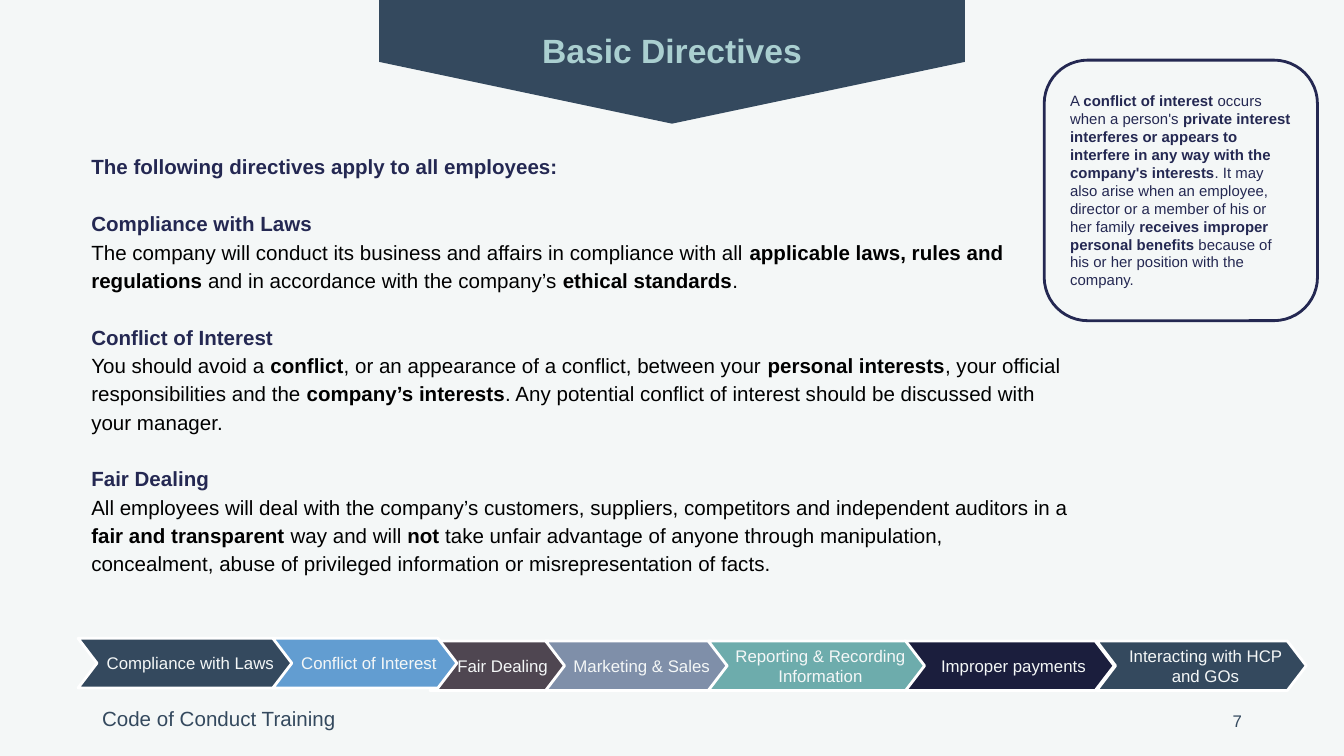
from pptx import Presentation
from pptx.dml.color import RGBColor
from pptx.enum.shapes import MSO_SHAPE as Preset
from pptx.enum.text import MSO_ANCHOR as Anchor, MSO_AUTO_SIZE as AutoSize, PP_ALIGN as Align
from pptx.util import Pt

COLORS = {
    "background": "F4F7F7", "slate": "34495E", "mint": "AACFD0",
    "indigo": "242852", "black": "000000", "white": "FFFFFF",
    "blue": "629DD1", "brown": "4F4651", "gray_blue": "7F8FA9",
    "teal": "6DACAC", "midnight": "1B1E3D",
}
SMALL_INSETS = (5, 3, 5, 3)
WIDE_INSETS = (7.2, 7.2, 7.2, 7.2)

INTRO = "The following directives apply to all employees:"
DIRECTIVES = [
    ("Compliance with Laws",
     "The company will conduct its business and affairs in compliance with all "
     "**applicable laws, rules and regulations** and in accordance with the "
     "company’s **ethical standards**."),
    ("Conflict of Interest",
     "You should avoid a **conflict**, or an appearance of a conflict, between your "
     "**personal interests**, your official responsibilities and the **company’s "
     "interests**. Any potential conflict of interest should be discussed with "
     "your manager."),
    ("Fair Dealing",
     "All employees will deal with the company’s customers, suppliers, competitors "
     "and independent auditors in a **fair and transparent **way and will **not **"
     "take unfair advantage of anyone through manipulation, concealment, abuse of "
     "privileged information or misrepresentation of facts."),
]
DEFINITION = (
    "A **conflict of interest** occurs when a person's **private interest interferes "
    "or appears to interfere in any way with the company's interests**. It may also "
    "arise when an employee, director or a member of his or her family **receives "
    "improper personal benefits** because of his or her position with the company."
)
TOPICS = [
    ("Fair Dealing", 230.4, 343.4, 73.4, "brown"),
    ("Improper payments", 484.6, 343.4, 112.3, "midnight"),
    ("Marketing & Sales", 292.3, 343.4, 98.6, "gray_blue"),
    ("Reporting & Recording Information", 379.4, 343.4, 115.9, "teal"),
    ("Compliance with Laws", 41.8, 342, 115.9, "slate"),
    ("Conflict of Interest", 146.2, 342, 98.6, "blue"),
    ("Interacting with HCP and GOs", 587.5, 343.4, 112.3, "slate"),
]


def rgb(name):
    """Return the named colour."""
    return RGBColor.from_string(COLORS[name])


def prepare_frame(holder, insets, anchor=Anchor.TOP):
    """Set wrapping, insets and anchor, and return the text frame."""
    frame = holder.text_frame
    frame.word_wrap = True
    frame.auto_size = AutoSize.NONE
    frame.vertical_anchor = anchor
    left, top, right, bottom = map(Pt, insets)
    frame.margin_left, frame.margin_top = left, top
    frame.margin_right, frame.margin_bottom = right, bottom
    return frame


def write(frame, text, *, size, color, bold=False, align=Align.LEFT, spacing=1.0, before=0):
    """Add a paragraph in which ** toggles bold."""
    paragraph = frame.add_paragraph() if frame.text else frame.paragraphs[0]
    paragraph.alignment = align
    paragraph.line_spacing = spacing
    paragraph.space_before = Pt(before)
    for index, part in enumerate(text.split("**")):
        run = paragraph.add_run()
        run.text = part
        run.font.name = "Arial"
        run.font.size = Pt(size)
        run.font.bold = bold or index % 2 == 1
        run.font.color.rgb = rgb(color)


def add_textbox(slide, box, insets=SMALL_INSETS, anchor=Anchor.TOP):
    """Add a text box and return its frame."""
    return prepare_frame(slide.shapes.add_textbox(*map(Pt, box)), insets, anchor)


def add_outline(shapes, preset, box, adjustment, fill=None, line=None):
    """Add a preset shape with optional fill and outline."""
    outline = shapes.add_shape(preset, *map(Pt, box))
    outline.adjustments[0] = adjustment
    outline.shadow.inherit = False
    if fill:
        outline.fill.solid()
        outline.fill.fore_color.rgb = rgb(fill)
    else:
        outline.fill.background()
    if line:
        outline.line.color.rgb = rgb(line)
        outline.line.width = Pt(1.5)
    else:
        outline.line.fill.background()
    return outline


def add_heading(slide):
    """Place the title over its downward-pointing banner."""
    banner = add_outline(slide.shapes, Preset.PENTAGON, (326.9, -123.8, 66.2, 313.9), 0.5, "slate")
    banner.rotation = 90
    title = slide.shapes.title
    title.element.addprevious(banner.element)
    title.left, title.top, title.width, title.height = map(Pt, (160.6, 13, 398.8, 27.4))
    write(prepare_frame(title, SMALL_INSETS), "Basic Directives",
          size=18, color="mint", bold=True, align=Align.CENTER)


def add_directives(slide):
    """Write the introduction and each directive."""
    frame = add_textbox(slide, (41.8, 77, 538.6, 253.4), WIDE_INSETS)
    write(frame, INTRO, size=11, color="indigo", bold=True, spacing=0.9)
    for heading, rule in DIRECTIVES:
        write(frame, heading, size=11, color="indigo", bold=True, spacing=1.15, before=15.2)
        write(frame, rule, size=11, color="black", spacing=1.15)


def add_definition(slide):
    """Add the rounded definition box."""
    callout = add_outline(slide.shapes, Preset.ROUNDED_RECTANGLE,
                          (559.4, 32.2, 146.4, 139.6), 0.167, line="indigo")
    write(prepare_frame(callout, WIDE_INSETS, Anchor.MIDDLE), DEFINITION, size=8, color="indigo")


def add_topic_trail(slide):
    """Add the grouped chevrons that name the training topics."""
    trail = slide.shapes.add_group_shape()
    for topic, left, top, width, fill in TOPICS:
        step = add_outline(trail.shapes, Preset.CHEVRON, (left, top, width, 26.6), 0.382, fill, "white")
        write(prepare_frame(step, (4.3, 0, 0, 0), Anchor.MIDDLE), topic,
              size=9, color="background", align=Align.CENTER)


def main():
    """Build and save the slide."""
    deck = Presentation()
    deck.slide_width, deck.slide_height = Pt(720), Pt(405)
    slide = deck.slides.add_slide(deck.slide_layouts[5])
    slide.background.fill.solid()
    slide.background.fill.fore_color.rgb = rgb("background")
    write(add_textbox(slide, (49.7, 375.1, 172.8, 18)), "Code of Conduct Training",
          size=11, color="slate")
    add_heading(slide)
    write(add_textbox(slide, (508.3, 375.1, 162, 21.6), anchor=Anchor.MIDDLE), "7",
          size=9, color="slate", align=Align.RIGHT)
    add_directives(slide)
    add_definition(slide)
    add_topic_trail(slide)
    deck.save("out.pptx")


if __name__ == "__main__":
    main()
